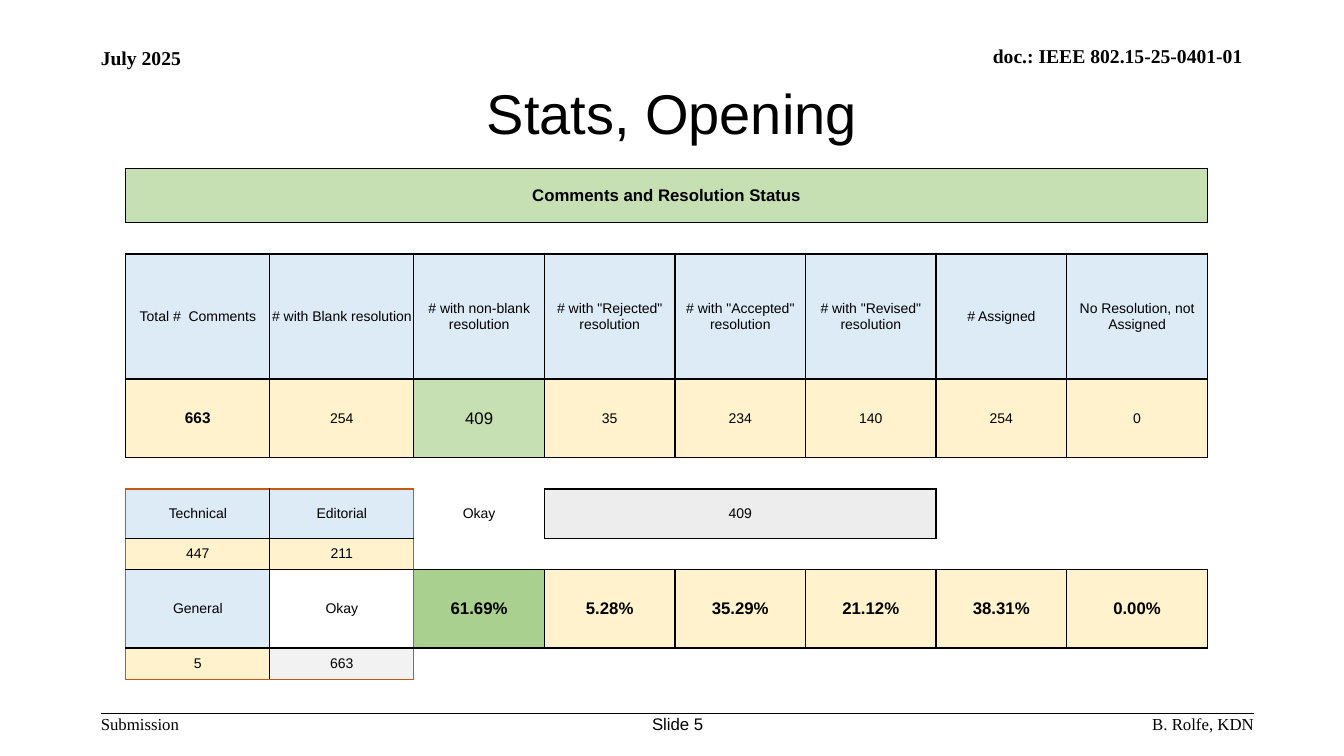
from lxml.etree import SubElement
from pptx import Presentation
from pptx.dml.color import RGBColor
from pptx.enum.shapes import MSO_CONNECTOR
from pptx.enum.text import MSO_ANCHOR, PP_ALIGN
from pptx.oxml.ns import qn
from pptx.util import Cm, Pt

BLACK = RGBColor(0x00, 0x00, 0x00)
ORANGE = RGBColor(0xC6, 0x59, 0x11)
GREEN = RGBColor(0xC6, 0xE0, 0xB4)
DEEP_GREEN = RGBColor(0xA9, 0xD0, 0x8E)
BLUE = RGBColor(0xDD, 0xEB, 0xF7)
CREAM = RGBColor(0xFF, 0xF2, 0xCC)
GREY = RGBColor(0xED, 0xED, 0xED)
PALE_GREY = RGBColor(0xF2, 0xF2, 0xF2)

TITLE = "Stats, Opening"
HEADINGS = [
    "Total #  Comments", "# with Blank resolution", "# with non-blank resolution",
    '# with "Rejected" resolution', '# with "Accepted" resolution',
    '# with "Revised" resolution', "# Assigned", "No Resolution, not Assigned",
]
COUNTS = ["254", "409", "35", "234", "140", "254", "0"]
SHARES = ["61.69%", "5.28%", "35.29%", "21.12%", "38.31%", "0.00%"]

STYLES = {
    "banner": (GREEN, 12, True),
    "heading": (BLUE, 10, False),
    "total": (CREAM, 11, True),
    "count": (CREAM, 10, False),
    "resolved": (GREEN, 12, False),
    "sum": (GREY, 10, False),
    "check": (None, 10, False),
    "check sum": (PALE_GREY, 10, False),
    "share": (CREAM, 12, True),
    "resolved share": (DEEP_GREEN, 12, True),
}
CELLS = {
    (0, 0): ("Comments and Resolution Status", "banner"),
    (3, 0): ("663", "total"),
    (5, 0): ("Technical", "heading"),
    (5, 1): ("Editorial", "heading"),
    (5, 2): ("Okay", "check"),
    (5, 3): ("409", "sum"),
    (6, 0): ("447", "count"),
    (6, 1): ("211", "count"),
    (7, 0): ("General", "heading"),
    (7, 1): ("Okay", "check"),
    (8, 0): ("5", "count"),
    (8, 1): ("663", "check sum"),
}
CELLS.update({(2, col): (text, "heading") for col, text in enumerate(HEADINGS)})
CELLS.update({(3, col): (text, "resolved" if col == 2 else "count")
              for col, text in enumerate(COUNTS, 1)})
CELLS.update({(7, col): (text, "resolved share" if col == 2 else "share")
              for col, text in enumerate(SHARES, 2)})
MERGES = [((0, 0), (0, 7)), ((5, 3), (5, 5))]
UNBOXED = {(5, 2)}
COLUMN_WIDTHS = [3.63] * 2 + [3.29] * 5 + [3.55]
ROW_HEIGHTS = [1.37, 0.79, 3.15, 1.98, 0.79, 1.24, 0.79, 1.98, 0.79]
TALLY = {(row, col) for row in range(5, 9) for col in range(2)}
SIDES = {"a:lnL": (0, -1), "a:lnR": (0, 1), "a:lnT": (-1, 0), "a:lnB": (1, 0)}
NO_GRID_STYLE = "{2D5ABB26-0587-4C30-8999-92F81FD0307C}"

SERIF = "Times New Roman"
LABELS = [
    ("July 2025", (2.54, 1.16, 5.64, 0.61), PP_ALIGN.LEFT, SERIF, 14, True),
    ("doc.: IEEE 802.15-25-0401-01", (15.8, 1.11, 15.52, 0.61), PP_ALIGN.RIGHT, SERIF, 14, True),
    ("Submission", (2.54, 17.98, 2.64, 0.51), PP_ALIGN.LEFT, SERIF, 12, False),
    ("Slide 5", (16.33, 17.98, 1.5, 0.51), PP_ALIGN.CENTER, "Arial", 12, False),
    ("B. Rolfe, KDN", (23.42, 17.98, 8.18, 0.51), PP_ALIGN.RIGHT, SERIF, 12, False),
]


def write(frame, text, align, name, size, bold):
    para = frame.paragraphs[0]
    para.alignment = align
    span = para.add_run()
    span.text = text
    for key, value in {"name": name, "size": Pt(size), "bold": bold}.items():
        setattr(span.font, key, value)
    span.font.color.rgb = BLACK


def clear_margins(target):
    for side in ("left", "right", "top", "bottom"):
        setattr(target, f"margin_{side}", 0)


def place(shape, bounds):
    for key, value in zip(("left", "top", "width", "height"), bounds):
        setattr(shape, key, Cm(value))


def add_label(page, text, bounds, align, name, size, bold):
    box = page.shapes.add_textbox(*map(Cm, bounds))
    box.text_frame.word_wrap = True
    clear_margins(box.text_frame)
    write(box.text_frame, text, align, name, size, bold)


def draw_borders(cell, position, boxed):
    properties = cell._tc.get_or_add_tcPr()
    row, col = position
    for index, (tag, (down, across)) in enumerate(SIDES.items()):
        neighbour = (row + down, col + across)
        line = properties.makeelement(qn(tag), {"w": str(Pt(1))})
        if boxed & {position, neighbour}:
            color = ORANGE if (position in TALLY) != (neighbour in TALLY) else BLACK
            if {position, neighbour} == {(4, col), (5, col)} and col > 1:
                color = BLACK
            fill = SubElement(line, qn("a:solidFill"))
            SubElement(fill, qn("a:srgbClr"), {"val": str(color)})
        else:
            SubElement(line, qn("a:noFill"))
        properties.insert(index, line)


def add_status_table(page):
    frame = page.shapes.add_table(
        len(ROW_HEIGHTS), len(COLUMN_WIDTHS), Cm(3.17), Cm(4.24),
        Cm(sum(COLUMN_WIDTHS)), Cm(sum(ROW_HEIGHTS)))
    table = frame.table
    table.first_row = table.horz_banding = False
    table._tbl.tblPr.find(qn("a:tableStyleId")).text = NO_GRID_STYLE
    for column, width in zip(table.columns, COLUMN_WIDTHS):
        column.width = Cm(width)
    for row, height in zip(table.rows, ROW_HEIGHTS):
        row.height = Cm(height)
    boxed = set(CELLS) - UNBOXED
    for first, last in MERGES:
        table.cell(*first).merge(table.cell(*last))
        boxed |= {(first[0], col) for col in range(first[1], last[1] + 1)}
    for row in range(len(ROW_HEIGHTS)):
        for col in range(len(COLUMN_WIDTHS)):
            cell = table.cell(row, col)
            clear_margins(cell)
            cell.vertical_anchor = MSO_ANCHOR.MIDDLE
            cell.fill.background()
            if (row, col) in CELLS:
                text, style = CELLS[row, col]
                color, size, bold = STYLES[style]
                if color is not None:
                    cell.fill.solid()
                    cell.fill.fore_color.rgb = color
                write(cell.text_frame, text, PP_ALIGN.CENTER, "Arial", size, bold)
            draw_borders(cell, (row, col), boxed)


def main():
    deck = Presentation()
    deck.slide_width, deck.slide_height = Cm(33.87), Cm(19.05)
    page = deck.slides.add_slide(deck.slide_layouts[5])
    title = page.shapes.title
    place(title, (2.54, 1.9, 28.78, 1.83))
    title.text_frame.vertical_anchor = MSO_ANCHOR.MIDDLE
    write(title.text_frame, TITLE, PP_ALIGN.CENTER, "Arial", 40, False)
    for label in LABELS:
        add_label(page, *label)
    rule = page.shapes.add_connector(
        MSO_CONNECTOR.STRAIGHT, Cm(2.54), Cm(17.98), Cm(31.6), Cm(17.98))
    rule.line.color.rgb = BLACK
    rule.line.width = Pt(1)
    SubElement(rule._element.spPr, qn("a:effectLst"))
    add_status_table(page)
    deck.save("out.pptx")


if __name__ == "__main__":
    main()
